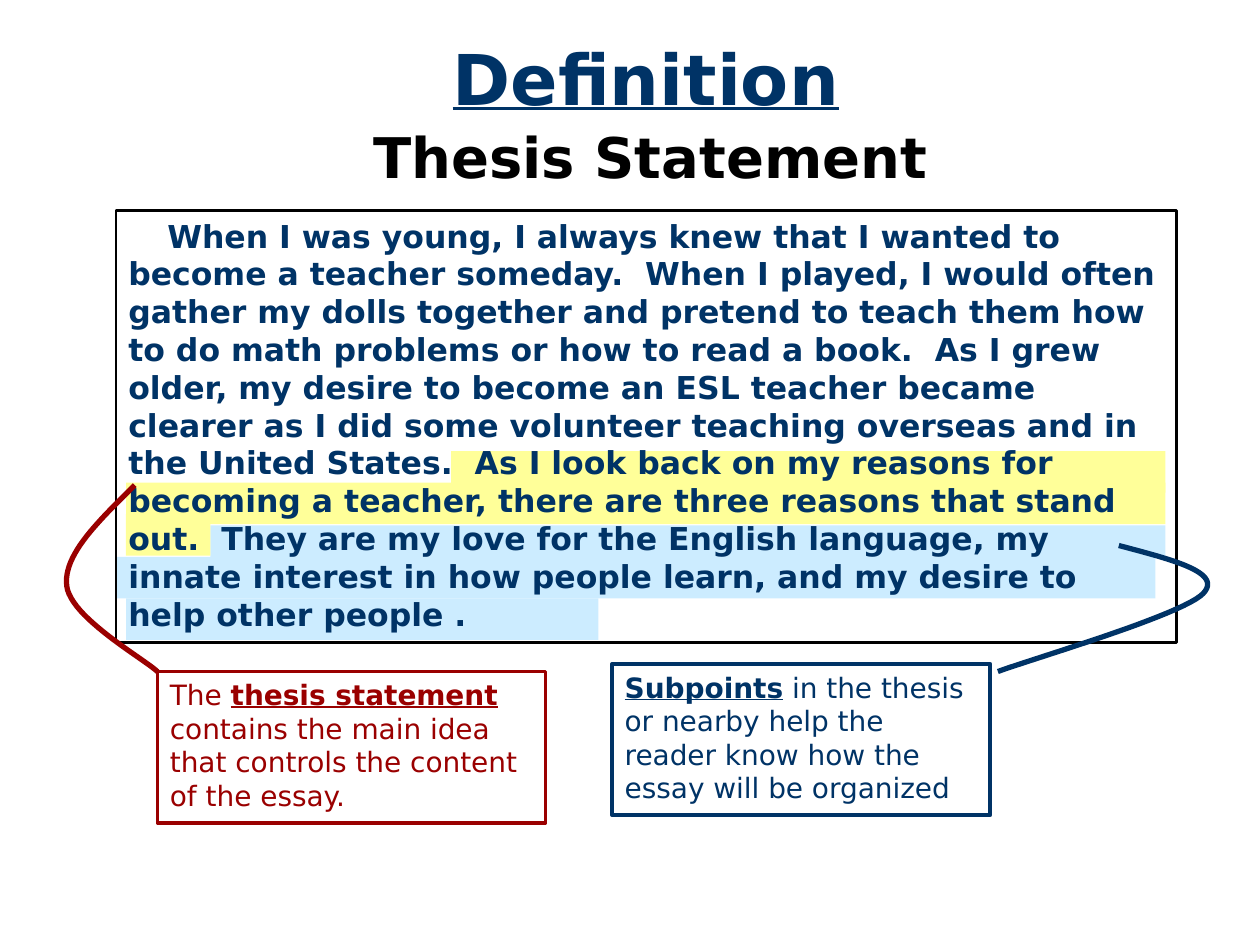
"""Builds the slide on the thesis statement of a definition essay."""
import pptx
import pptx.dml.color
import pptx.enum.shapes
import pptx.enum.text
import pptx.util
from pptx.util import Inches

NAVY, RED, BLACK, WHITE = "003366", "9A0000", "000000", "FFFFFF"
YELLOW, SKY = "FFFF99", "CCECFF"
CENTER = pptx.enum.text.PP_ALIGN.CENTER
LEFT = pptx.enum.text.PP_ALIGN.LEFT
CURVE_STEPS = 24

ESSAY = (
    "When I was young, I always knew that I wanted to become a teacher someday.  "
    "When I played, I would often gather my dolls together and pretend to teach "
    "them how to do math problems or how to read a book.  As I grew older, my "
    "desire to become an ESL teacher became clearer as I did some volunteer "
    "teaching overseas and in the United States.  As I look back on my reasons "
    "for becoming a teacher, there are three reasons that stand out.  They are my "
    "love for the English language, my innate interest in how people learn, and "
    "my desire to help other people ."
)
SUBPOINT_BARS = [(1.67, 4.17, 7.58, 0.25), (0.92, 4.42, 8.25, 0.33), (1, 4.75, 3.75, 0.33)]
THESIS_BARS = [(3.58, 3.58, 5.67, 0.33), (1, 3.83, 8.25, 0.33), (1, 4.08, 0.67, 0.33)]
THESIS_CURVE = [
    (1.07, 3.85), (0.79, 4.13), (0.5, 4.4), (0.53, 4.65),
    (0.56, 4.9), (1.13, 5.22), (1.25, 5.33),
]
SUBPOINT_CURVE = [
    (8.88, 4.33), (9.29, 4.44), (9.71, 4.54), (9.55, 4.71),
    (9.39, 4.88), (8.19, 5.23), (7.92, 5.33),
]


def color(value):
    return pptx.dml.color.RGBColor.from_string(value)


def bezier_point(corners, t):
    weights = ((1 - t) ** 3, 3 * t * (1 - t) ** 2, 3 * t * t * (1 - t), t ** 3)
    return tuple(
        Inches(sum(weight * corner[axis] for weight, corner in zip(weights, corners)))
        for axis in (0, 1)
    )


class SlideBuilder:
    """Holds the style and the current slide."""

    def __init__(self, slide, font="DejaVu Sans"):
        self.slide = slide
        self.font = font

    def add_text(self, shape, spans, size, ink, align=LEFT, indent=0, anchor="TOP"):
        frame = shape.text_frame
        frame.word_wrap = True
        frame.auto_size = pptx.enum.text.MSO_AUTO_SIZE.SHAPE_TO_FIT_TEXT
        frame.vertical_anchor = pptx.enum.text.MSO_ANCHOR[anchor]
        frame.margin_left = frame.margin_right = Inches(0.1)
        frame.margin_top = frame.margin_bottom = Inches(0.05)
        para = frame.paragraphs[0]
        para.alignment = align
        if indent:
            para._p.get_or_add_pPr().set("indent", str(Inches(indent)))
        for text, bold, underline in spans:
            span = para.add_run()
            span.text = text
            span.font.name = self.font
            span.font.size = pptx.util.Pt(size)
            span.font.bold = bold
            span.font.underline = underline
            span.font.color.rgb = color(ink)

    def title(self, place, spans, size, ink):
        title = self.slide.shapes.title
        title.left, title.top, title.width, title.height = map(Inches, place)
        self.add_text(title, spans, size, ink, CENTER, anchor="BOTTOM")

    def label(self, place, spans, size, ink):
        box = self.slide.shapes.add_textbox(*map(Inches, place))
        self.add_text(box, spans, size, ink, CENTER)

    def highlight(self, bars, fill):
        group = self.slide.shapes.add_group_shape()
        for place in bars:
            bar = group.shapes.add_shape(
                pptx.enum.shapes.MSO_SHAPE.RECTANGLE, *map(Inches, place))
            bar.shadow.inherit = False
            bar.fill.solid()
            bar.fill.fore_color.rgb = color(fill)
            bar.line.fill.background()

    def outline(self, shape, ink, width):
        shape.shadow.inherit = False
        shape.fill.background()
        shape.line.color.rgb = color(ink)
        shape.line.width = pptx.util.Pt(width)

    def framed_text(self, place, spans, size, ink, line, width, fill=None, indent=0):
        box = self.slide.shapes.add_shape(
            pptx.enum.shapes.MSO_SHAPE.RECTANGLE, *map(Inches, place))
        self.outline(box, line, width)
        if fill:
            box.fill.solid()
            box.fill.fore_color.rgb = color(fill)
        self.add_text(box, spans, size, ink, indent=indent)

    def curve(self, corners, ink):
        points = [
            bezier_point(corners[first:first + 4], step / CURVE_STEPS)
            for first in range(0, len(corners) - 1, 3)
            for step in range(1, CURVE_STEPS + 1)
        ]
        builder = self.slide.shapes.build_freeform(*map(Inches, corners[0]))
        builder.add_line_segments(points, close=False)
        self.outline(builder.convert_to_shape(), ink, 3)


def main():
    deck = pptx.Presentation()
    deck.slide_width, deck.slide_height = Inches(10), Inches(7.5)
    page = SlideBuilder(deck.slides.add_slide(deck.slide_layouts[5]))

    page.highlight(SUBPOINT_BARS, SKY)
    page.highlight(THESIS_BARS, YELLOW)
    page.framed_text((0.92, 1.67, 8.42, 3.43), [(ESSAY, True, False)],
                     18, NAVY, BLACK, 1.5, indent=0.31)
    page.title((0.5, 0.23, 9.25, 0.77), [("Definition", True, True)], 40, NAVY)
    page.label((1.25, 0.92, 7.83, 0.63), [("Thesis Statement", True, False)], 32, BLACK)

    page.framed_text((1.25, 5.33, 3.08, 1.2), [
        ("The ", False, False),
        ("thesis statement", True, True),
        (" contains the main idea that controls the content of the essay.", False, False),
    ], 16, RED, RED, 2.25, WHITE)
    page.curve(THESIS_CURVE, RED)

    page.framed_text((4.86, 5.27, 3, 1.2), [
        ("Subpoints", True, True),
        (" in the thesis or nearby help the reader know how the essay will be organized",
         False, False),
    ], 16, NAVY, NAVY, 2.25, WHITE)
    page.curve(SUBPOINT_CURVE, NAVY)

    deck.save("out.pptx")


if __name__ == "__main__":
    main()
